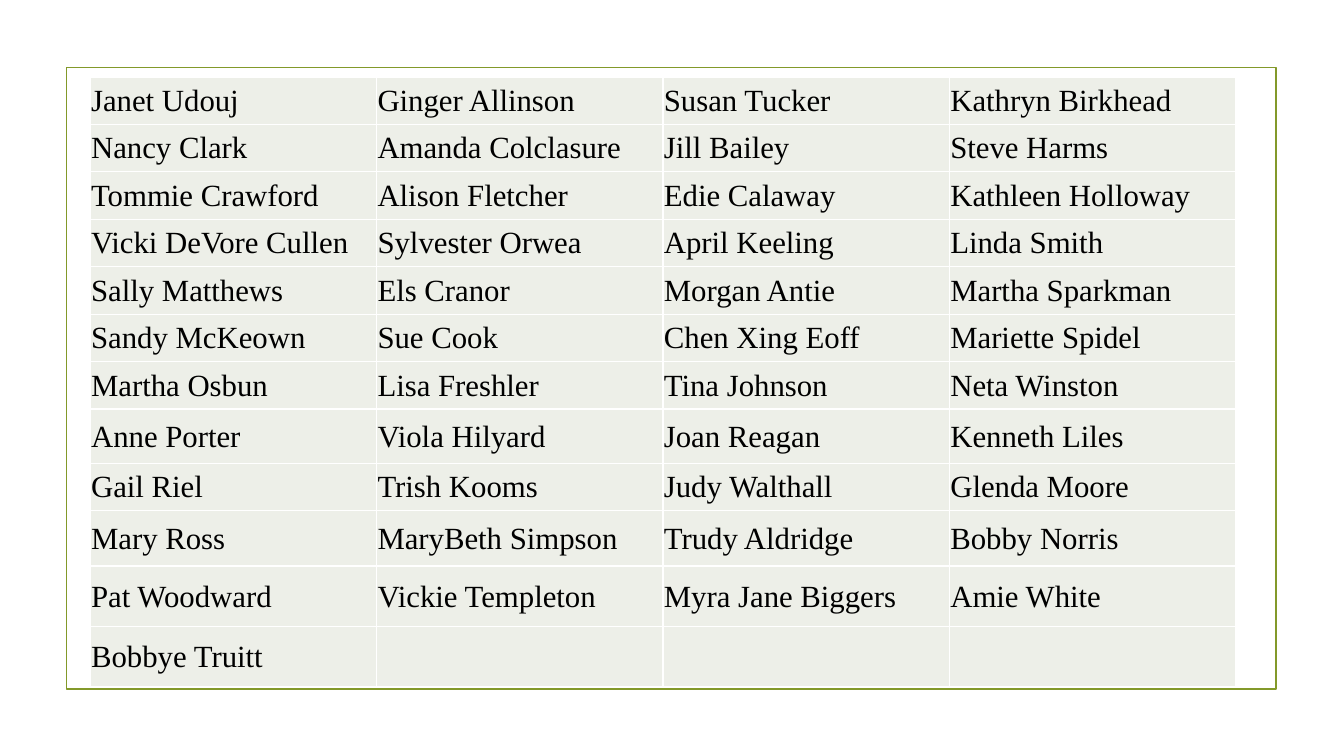
import pptx
import pptx.util
import pptx.dml.color
import pptx.enum.shapes
import pptx.enum.text
from dataclasses import dataclass
from lxml import etree
from pptx.util import Pt

# Content
NAMES = [
    ("Janet Udouj", "Ginger Allinson", "Susan Tucker", "Kathryn Birkhead"),
    ("Nancy Clark", "Amanda Colclasure", "Jill Bailey", "Steve Harms"),
    ("Tommie Crawford", "Alison Fletcher", "Edie Calaway", "Kathleen Holloway"),
    ("Vicki DeVore Cullen", "Sylvester Orwea", "April Keeling", "Linda Smith"),
    ("Sally Matthews", "Els Cranor", "Morgan Antie", "Martha Sparkman"),
    ("Sandy McKeown", "Sue Cook", "Chen Xing Eoff", "Mariette Spidel"),
    ("Martha Osbun", "Lisa Freshler", "Tina Johnson", "Neta Winston"),
    ("Anne Porter", "Viola Hilyard", "Joan Reagan", "Kenneth Liles"),
    ("Gail Riel", "Trish Kooms", "Judy Walthall", "Glenda Moore"),
    ("Mary Ross", "MaryBeth Simpson", "Trudy Aldridge", "Bobby Norris"),
    ("Pat Woodward", "Vickie Templeton", "Myra Jane Biggers", "Amie White"),
    ("Bobbye Truitt", "", "", ""),
]
ROW_HEIGHT = 33.9
TALL_ROWS = {7: 38.9, 9: 39.4, 10: 43.2, 11: 43.2}
COL_WIDTH = 204.6
TABLE_LEFT, TABLE_TOP = 64.4, 55
FRAME = (47.5, 48.2, 864, 444)


@dataclass(frozen=True)
class Theme:
    font: str = "Times New Roman"
    size: float = 22
    text: str = "000000"
    cell: str = "EDEFE8"
    border: str = "FFFFFF"
    border_width: float = 1
    frame: str = "83992A"
    frame_width: float = 1.25


THEME = Theme()
rgb = pptx.dml.color.RGBColor.from_string


def add_borders(cell):
    tcPr = cell._tc.get_or_add_tcPr()
    qn = pptx.oxml.ns.qn
    for side in ("lnL", "lnR", "lnT", "lnB"):
        ln = etree.SubElement(tcPr, qn(f"a:{side}"), w=str(Pt(THEME.border_width)))
        fill = etree.SubElement(ln, qn("a:solidFill"))
        etree.SubElement(fill, qn("a:srgbClr"), val=THEME.border)


def format_cell(cell, name):
    add_borders(cell)
    cell.fill.solid()
    cell.fill.fore_color.rgb = rgb(THEME.cell)
    cell.margin_left = cell.margin_right = cell.margin_top = Pt(0.7)
    cell.margin_bottom = Pt(0)
    cell.vertical_anchor = pptx.enum.text.MSO_ANCHOR.MIDDLE
    p = cell.text_frame.paragraphs[0]
    p.text = name
    p.font.name = THEME.font
    p.font.size = Pt(THEME.size)
    p.font.color.rgb = rgb(THEME.text)


def main():
    prs = pptx.Presentation()
    prs.slide_width, prs.slide_height = Pt(960), Pt(540)
    s = prs.slides.add_slide(prs.slide_layouts[6])

    # Frame around the names
    sp = s.shapes.add_shape(pptx.enum.shapes.MSO_SHAPE.RECTANGLE, *map(Pt, FRAME))
    sp.shadow.inherit = False
    sp.fill.background()
    sp.line.color.rgb = rgb(THEME.frame)
    sp.line.width = Pt(THEME.frame_width)

    # Table of names
    heights = [TALL_ROWS.get(i, ROW_HEIGHT) for i in range(len(NAMES))]
    cols = len(NAMES[0])
    table = s.shapes.add_table(len(NAMES), cols, Pt(TABLE_LEFT), Pt(TABLE_TOP),
                               Pt(COL_WIDTH * cols), Pt(sum(heights))).table
    table.first_row = table.horz_banding = False
    for col in table.columns:
        col.width = Pt(COL_WIDTH)
    for row, height, names in zip(table.rows, heights, NAMES):
        row.height = Pt(height)
        for cell, name in zip(row.cells, names):
            format_cell(cell, name)

    prs.save("out.pptx")


if __name__ == "__main__":
    main()
